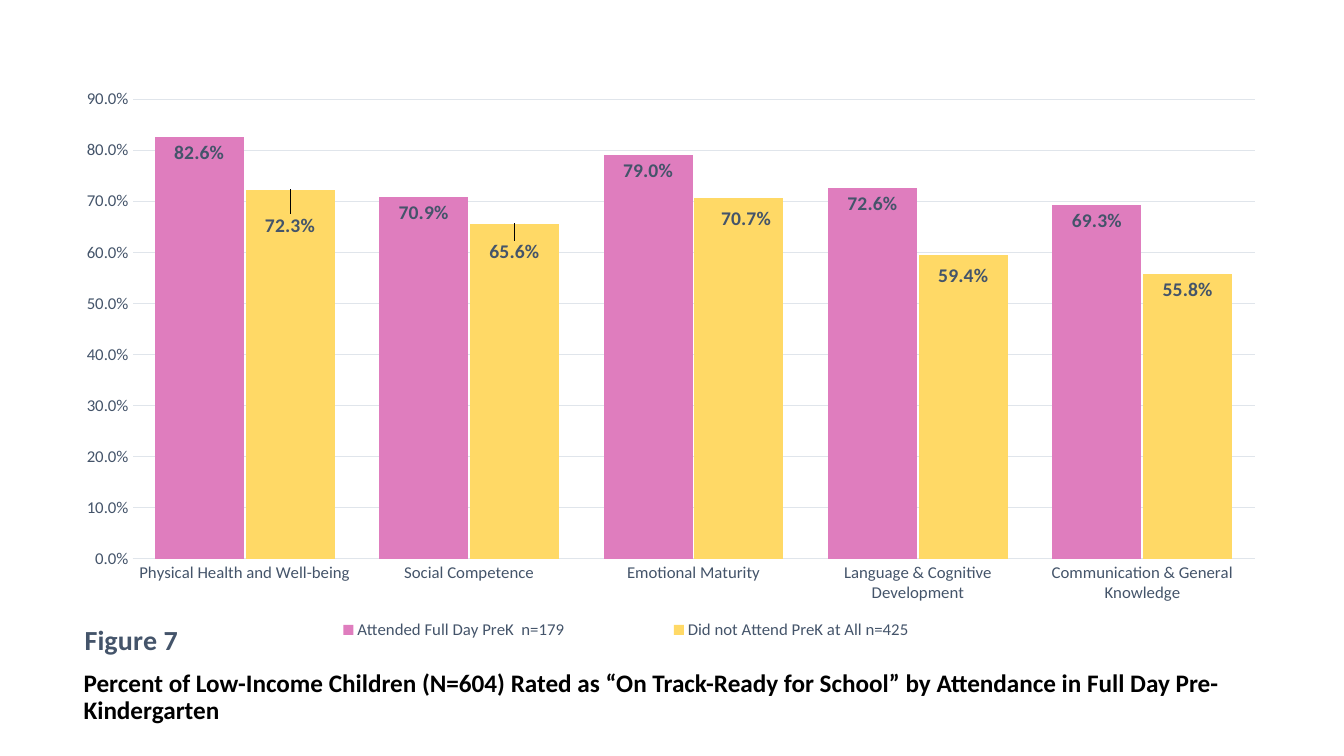
from dataclasses import dataclass

from lxml import etree
from pptx import Presentation
from pptx import util as u
from pptx.chart import data as cd
from pptx.dml import color as col
from pptx.enum import chart as ch, text
from pptx.oxml import ns


@dataclass(frozen=True)
class Theme:
    face: str = "Calibri"
    ink: str = "44546A"
    black: str = "000000"
    rule: str = "E0E5EB"
    pink: str = "DF7DBE"
    gold: str = "FFD966"
    head: int = 18
    figure: int = 20
    value: int = 14
    small: int = 12


THEME = Theme()
GROUPS = [
    "Physical Health and Well-being",
    "Social Competence",
    "Emotional Maturity",
    "Language & Cognitive Development",
    "Communication & General Knowledge",
]
SERIES = [
    ("Attended Full Day PreK  n=179", THEME.pink,
     [0.826, 0.709, 0.79, 0.726, 0.693]),
    ("Did not Attend PreK at All n=425", THEME.gold,
     [0.723, 0.656, 0.707, 0.594, 0.558]),
]
SHIFTS = [(0, 0.033), (0, 0.02), (0.006, 0.009), (0, 0.008), (0, 0)]


def rgb(code):
    return col.RGBColor.from_string(code)


def style(font, size, code=THEME.ink, bold=False):
    font.name = THEME.face
    font.size = u.Pt(size)
    font.bold = bold
    font.color.rgb = rgb(code)


def rule(line):
    line.color.rgb = rgb(THEME.rule)
    line.width = u.Pt(0.75)


def place(node, spot, **parts):
    old = node.find(ns.qn("c:layout"))
    if old is not None:
        node.remove(old)
    frame = etree.Element(ns.qn("c:layout"))
    inner = etree.SubElement(frame, ns.qn("c:manualLayout"))
    for tag, val in parts.items():
        etree.SubElement(inner, ns.qn("c:" + tag)).set("val", str(val))
    node.insert(spot, frame)


def axes(chart):
    cat, val = chart.category_axis, chart.value_axis
    for axis in (cat, val):
        axis.major_tick_mark = axis.minor_tick_mark = ch.XL_TICK_MARK.NONE
        style(axis.tick_labels.font, THEME.small)
    rule(cat.format.line)
    val.format.line.fill.background()
    val.minimum_scale, val.maximum_scale, val.major_unit = 0, 0.9, 0.1
    val.has_major_gridlines = True
    rule(val.major_gridlines.format.line)
    val.tick_labels.number_format = "0.0%"
    val.tick_labels.number_format_is_linked = False


def bars(plot):
    plot.gap_width, plot.overlap = 50, -2
    plot.vary_by_categories = False
    for bar, (_, code, _) in zip(plot.series, SERIES):
        bar.format.fill.solid()
        bar.format.fill.fore_color.rgb = rgb(code)
        tags = bar.data_labels
        tags.show_value = True
        tags.number_format = "0.0%"
        tags.number_format_is_linked = False
        tags.position = ch.XL_LABEL_POSITION.INSIDE_END
        style(tags.font, THEME.value, bold=True)
    for i, (x, y) in enumerate(SHIFTS):
        tag = bar.points[i].data_label
        tag.position = ch.XL_LABEL_POSITION.INSIDE_END
        style(tag.font, THEME.value, bold=True)
    for node, (x, y) in zip(tags._element.findall(ns.qn("c:dLbl")), SHIFTS):
        place(node, 1, x=x, y=y)


def labels(chart):
    chart.has_title = True
    title = chart.chart_title
    run = title.text_frame.paragraphs[0].add_run()
    run.text = "Figure 7"
    style(run.font, THEME.figure, bold=True)
    title.include_in_layout = True
    place(title._element, 1, xMode="edge", yMode="edge", x=0.005, y=0.932)
    chart.has_legend = True
    key = chart.legend
    key.position = ch.XL_LEGEND_POSITION.BOTTOM
    key.include_in_layout = False
    style(key.font, THEME.small)
    place(key._element, 1, xMode="edge", yMode="edge",
          x=0.138, y=0.93, w=0.642, h=0.05)


def graph(slide, box):
    data = cd.CategoryChartData(number_format="0.0%")
    data.categories = GROUPS
    for name, _, vals in SERIES:
        data.add_series(name, vals)
    kind = ch.XL_CHART_TYPE.COLUMN_CLUSTERED
    chart = slide.shapes.add_chart(kind, *map(u.Pt, box), data).chart
    style(chart.font, 10, THEME.black)
    axes(chart)
    bars(chart.plots[0])
    labels(chart)
    area = chart._chartSpace.chart.plotArea
    place(area, 0, layoutTarget="inner", xMode="edge", yMode="edge",
          x=0.049, y=0.101, w=0.932, h=0.74)


def header(slide, box):
    title = slide.shapes.title
    title.left, title.top, title.width, title.height = map(u.Pt, box)
    frame = title.text_frame
    frame.word_wrap = True
    frame.auto_size = text.MSO_AUTO_SIZE.NONE
    frame.vertical_anchor = text.MSO_ANCHOR.MIDDLE
    para = frame.paragraphs[0]
    para.alignment = text.PP_ALIGN.LEFT
    para.line_spacing = 0.9
    run = para.add_run()
    run.text = ("Percent of Low-Income Children (N=604) Rated as “On Track-Ready "
                "for School” by Attendance in Full Day Pre-Kindergarten")
    style(run.font, THEME.head, THEME.black, True)


def main():
    deck = Presentation()
    deck.slide_width, deck.slide_height = u.Pt(960), u.Pt(540)
    slide = deck.slides.add_slide(deck.slide_layouts[5])
    left, top, wide, high = 52.5, 26, 860, 450
    header(slide, (left, top + high, 898.5, 45))
    graph(slide, (left, top, wide, high))
    deck.save("out.pptx")


if __name__ == "__main__":
    main()
